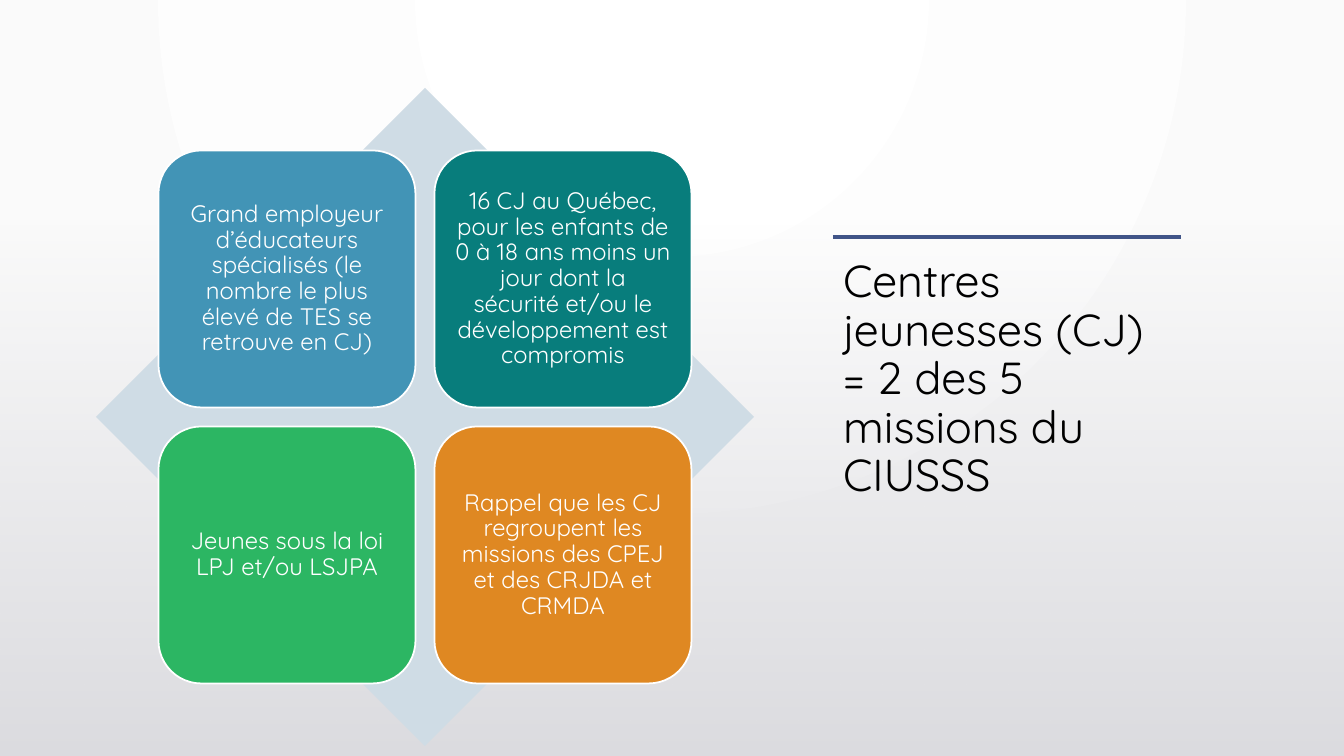
from dataclasses import dataclass

from lxml import etree
from pptx import Presentation
from pptx.dml.color import RGBColor
from pptx.enum.shapes import MSO_CONNECTOR, MSO_SHAPE
from pptx.enum.text import MSO_ANCHOR, MSO_AUTO_SIZE, PP_ALIGN
from pptx.oxml import parse_xml
from pptx.oxml.ns import nsdecls, qn
from pptx.util import Pt

TITLE = "Centres jeunesses (CJ) = 2 des 5 missions du CIUSSS"
CARDS = [
    ("Grand employeur d’éducateurs spécialisés (le nombre le plus élevé de TES "
     "se retrouve en CJ)", "4294B6"),
    ("16 CJ au Québec, pour les enfants de 0 à 18 ans moins un jour dont la "
     "sécurité et/ou le développement est compromis", "087D7C"),
    ("Jeunes sous la loi LPJ et/ou LSJPA", "2CB663"),
    ("Rappel que les CJ regroupent les missions des CPEJ et des CRJDA et CRMDA",
     "DF8822"),
]


@dataclass(frozen=True)
class Theme:
    font: str = "Quicksand"
    title_size: int = 32
    card_size: int = 17
    ink: str = "000000"
    white: str = "FFFFFF"
    halo: str = "FAFAFA"
    shade: str = "DCDCE0"
    rule: str = "415588"
    diamond: str = "CFDCE5"


THEME = Theme()
DIAMOND, ROUNDED, RECTANGLE = (
    MSO_SHAPE.DIAMOND, MSO_SHAPE.ROUNDED_RECTANGLE, MSO_SHAPE.RECTANGLE)
STRAIGHT = MSO_CONNECTOR.STRAIGHT
LEFT, CENTER = PP_ALIGN.LEFT, PP_ALIGN.CENTER
TOP, MIDDLE = MSO_ANCHOR.TOP, MSO_ANCHOR.MIDDLE

PAGE_WIDTH, PAGE_HEIGHT = 1344, 756
SHADE_TOP = 223
COLUMN_LEFT, COLUMN_WIDTH = 833, 348
RULE_Y, TITLE_TOP, TITLE_HEIGHT = 237, 254, 413
DIAMOND_LEFT, DIAMOND_TOP, DIAMOND_SIZE = 96, 88, 658
CARD_SIZE, CARD_GAP, CARD_INSET = 257, 19, 7


def px(length):
    return round(length * 914400 / 100.8)


def color(name):
    return RGBColor.from_string(name)


def set_gradient(owner, fill, stops, direction):
    """Give fill, which belongs to the element owner, (position, colour, alpha) stops."""
    fill.gradient()
    gradient = next(owner.iter(qn("a:gradFill")))
    for child in list(gradient):
        gradient.remove(child)
    stop_list = etree.SubElement(gradient, qn("a:gsLst"))
    for position, name, alpha in stops:
        stop = etree.SubElement(stop_list, qn("a:gs"), pos=str(position * 1000))
        tint = etree.SubElement(stop, qn("a:srgbClr"), val=name)
        etree.SubElement(tint, qn("a:alpha"), val=str(alpha * 1000))
    gradient.append(parse_xml(direction))


def add_plain_shape(page, kind, left, top, width, height):
    shape = page.shapes.add_shape(kind, px(left), px(top), px(width), px(height))
    shape.shadow.inherit = False
    shape.line.fill.background()
    return shape


def write(shape, text, size, ink, align, anchor):
    frame = shape.text_frame
    frame.word_wrap = True
    frame.auto_size = MSO_AUTO_SIZE.NONE
    frame.vertical_anchor = anchor
    frame.text = text
    para = frame.paragraphs[0]
    para.alignment = align
    para.line_spacing = 0.9
    para.font.name = THEME.font
    para.font.size = Pt(size)
    para.font.color.rgb = color(ink)


def add_backdrop(page):
    set_gradient(
        page.element, page.background.fill,
        [(0, THEME.white, 100), (100, THEME.halo, 100)],
        f'<a:path {nsdecls("a")} path="circle">'
        '<a:fillToRect l="43000" t="0" r="43000" b="100000"/></a:path>')
    shade = add_plain_shape(
        page, RECTANGLE, 0, SHADE_TOP, PAGE_WIDTH, PAGE_HEIGHT - SHADE_TOP)
    set_gradient(
        shape_element := shade.element, shade.fill,
        [(0, THEME.shade, 0), (100, THEME.shade, 100)],
        f'<a:lin {nsdecls("a")} ang="5400000" scaled="0"/>')
    shape_element.getparent().insert(2, shape_element)  # behind the title


def add_title(page):
    title = page.shapes.title
    title.left, title.top = px(COLUMN_LEFT), px(TITLE_TOP)
    title.width, title.height = px(COLUMN_WIDTH), px(TITLE_HEIGHT)
    write(title, TITLE, THEME.title_size, THEME.ink, LEFT, TOP)
    rule = page.shapes.add_connector(
        STRAIGHT, px(COLUMN_LEFT), px(RULE_Y),
        px(COLUMN_LEFT + COLUMN_WIDTH), px(RULE_Y))
    rule.line.color.rgb = color(THEME.rule)
    rule.line.width = Pt(2.5)
    etree.SubElement(rule.element.spPr, qn("a:effectLst"))


def add_matrix(page):
    diamond = add_plain_shape(
        page, DIAMOND, DIAMOND_LEFT, DIAMOND_TOP, DIAMOND_SIZE, DIAMOND_SIZE)
    diamond.fill.solid()
    diamond.fill.fore_color.rgb = color(THEME.diamond)

    margin = (DIAMOND_SIZE - 2 * CARD_SIZE - CARD_GAP) / 2
    step = CARD_SIZE + CARD_GAP
    for index, (text, fill) in enumerate(CARDS):
        row, column = divmod(index, 2)
        card = add_plain_shape(
            page, ROUNDED, DIAMOND_LEFT + margin + column * step,
            DIAMOND_TOP + margin + row * step, CARD_SIZE, CARD_SIZE)
        card.fill.solid()
        card.fill.fore_color.rgb = color(fill)
        card.line.color.rgb = color(THEME.white)
        card.line.width = Pt(1.25)
        frame = card.text_frame
        frame.margin_left = frame.margin_right = px(CARD_INSET)
        frame.margin_top = frame.margin_bottom = px(CARD_INSET)
        write(card, text, THEME.card_size, THEME.white, CENTER, MIDDLE)


def main():
    deck = Presentation()
    deck.slide_width, deck.slide_height = px(PAGE_WIDTH), px(PAGE_HEIGHT)
    page = deck.slides.add_slide(deck.slide_layouts.get_by_name("Title Only"))
    add_backdrop(page)
    add_title(page)
    add_matrix(page)
    deck.save("out.pptx")


if __name__ == "__main__":
    main()
